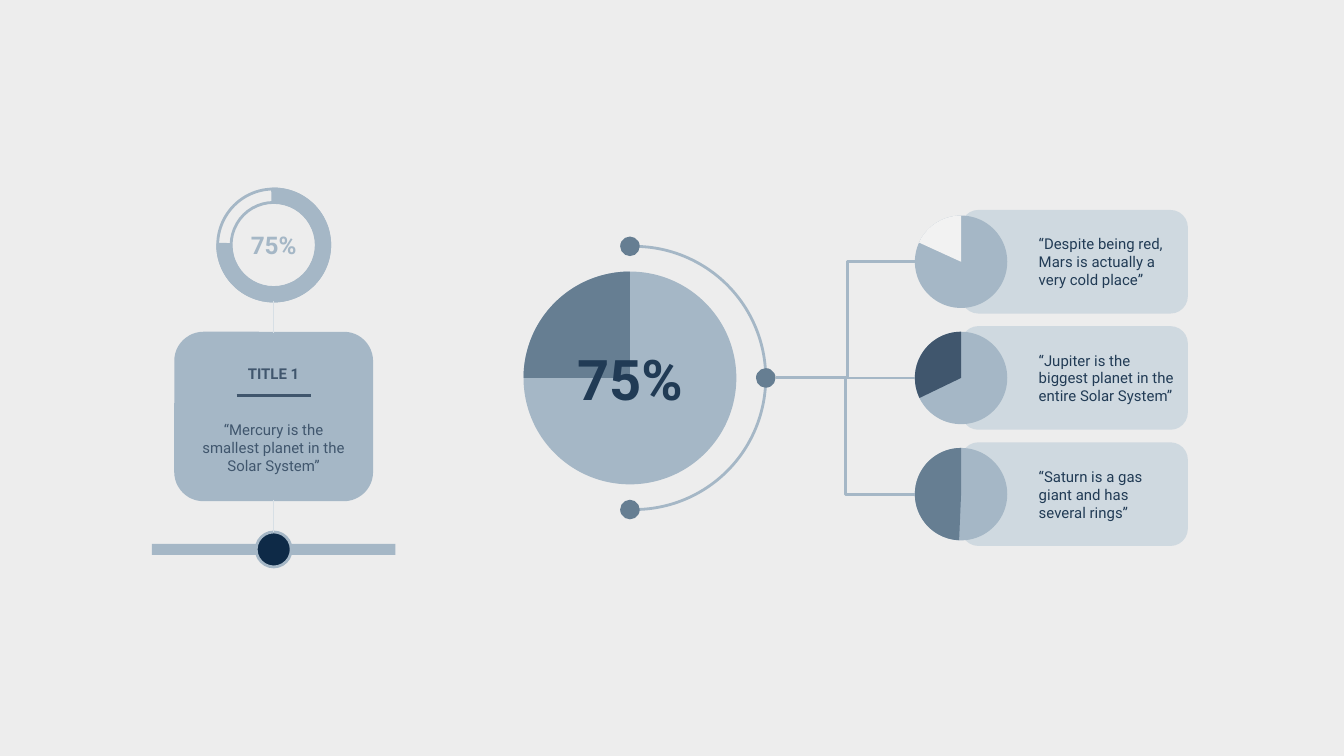
from typing import NamedTuple, Optional

from lxml import etree
from pptx import Presentation
from pptx.dml.color import RGBColor
from pptx.enum.shapes import MSO_CONNECTOR, MSO_SHAPE
from pptx.enum.text import MSO_ANCHOR, PP_ALIGN
from pptx.oxml.ns import qn
from pptx.util import Emu, Inches, Pt

ARC, BLOCK, DONUT = MSO_SHAPE.ARC, MSO_SHAPE.BLOCK_ARC, MSO_SHAPE.DONUT
OVAL, PIE = MSO_SHAPE.OVAL, MSO_SHAPE.PIE
RECT, ROUND = MSO_SHAPE.RECTANGLE, MSO_SHAPE.ROUNDED_RECTANGLE
ELBOW, LINE = MSO_CONNECTOR.ELBOW, MSO_CONNECTOR.STRAIGHT
LEFT, CENTER, MIDDLE = PP_ALIGN.LEFT, PP_ALIGN.CENTER, MSO_ANCHOR.MIDDLE

SCALE = 914400 / 192  # EMU in one px
WIDE, HIGH = 1920, 1080
FONT = "Roboto"
BACK, MIST, SKY, STEEL = "EDEDED", "CFD9E0", "A5B7C6", "667E92"
SLATE, NAVY, INK, HAIR, PALE = "40566D", "213B55", "0E2A47", "D7DFE5", "F2F2F2"
CORNER = 0.167
TOP = 270  # degrees at twelve o'clock


class Box(NamedTuple):
    """An area given by its centre and size, in px."""
    x: int
    y: int
    w: int
    h: int


class Fact(NamedTuple):
    text: str
    start: float  # degrees where the slice begins
    color: str
    bend: Optional[float]  # where its elbow turns


FACTS = [
    Fact("“Despite being red, Mars is actually a very cold place”", 204.5, PALE, 0.515),
    Fact("“Jupiter is the biggest planet in the entire Solar System”", 154.2, SLATE, None),
    Fact("“Saturn is a gas giant and has several rings”", 92.4, STEEL, None),
]
MID = 540  # centre line of the middle diagram
STEP = 166  # distance between facts
HUB = 900  # centre of the large pie
REACH = 188  # radius of the arc
NODE = 1094  # dot on the right of the arc
DOT = 28
SPOT = 1373  # centre of the small pies
SMALL = 132
AXIS = 391  # centre of the left column


def px(n: float) -> Emu:
    return Emu(round(n * SCALE))


def rgb(code: str) -> RGBColor:
    return RGBColor.from_string(code)


def turn(deg: float) -> float:
    """Angle as an adjustment value."""
    return deg * 0.6


def place(box: Box) -> list[Emu]:
    return [px(n) for n in (box.x - box.w / 2, box.y - box.h / 2, box.w, box.h)]


def disc(x: int, y: int, size: int) -> Box:
    return Box(x, y, size, size)


def draw(slide, kind, box: Box, fill: Optional[str] = None,
         line: Optional[str] = None, adj: tuple[float, ...] = ()) -> None:
    shape = slide.shapes.add_shape(kind, *place(box))
    shape.shadow.inherit = False
    for i, value in enumerate(adj):
        shape.adjustments[i] = value
    if fill:
        shape.fill.solid()
        shape.fill.fore_color.rgb = rgb(fill)
    else:
        shape.fill.background()
    if line:
        shape.line.color.rgb = rgb(line)
        shape.line.width = Pt(1.5)
    else:
        shape.line.fill.background()


def pie(slide, box: Box, start: float, color: str) -> None:
    draw(slide, OVAL, box, SKY)
    draw(slide, PIE, box, color, adj=(turn(start), turn(TOP)))


def link(slide, kind, start: tuple[int, int], end: tuple[int, int], color: str,
         width: float = 1.5, bend: Optional[float] = None) -> None:
    wire = slide.shapes.add_connector(kind, *map(px, start + end))
    wire.line.color.rgb = rgb(color)
    wire.line.width = Pt(width)
    props = wire.line._ln.getparent()
    etree.SubElement(props, qn("a:effectLst"))
    if bend:
        guides = props.find(qn("a:prstGeom")).find(qn("a:avLst"))
        etree.SubElement(guides, qn("a:gd"), name="adj1",
                         fmla=f"val {round(bend * 100000)}")


def label(slide, box: Box, text: str, color: str, size: int = 8,
          bold: bool = False, align=CENTER) -> None:
    frame = slide.shapes.add_textbox(*place(box)).text_frame
    frame.word_wrap = True
    frame.vertical_anchor = MIDDLE
    frame.margin_left = frame.margin_right = Inches(0.1)
    frame.margin_top = frame.margin_bottom = Inches(0.1)
    frame.text = text
    para = frame.paragraphs[0]
    para.alignment = align
    font = para.runs[0].font
    font.name, font.size, font.bold = FONT, Pt(size), bold
    font.color.rgb = rgb(color)


def diagram(slide) -> None:
    rows = [(MID + (i - 1) * STEP, fact) for i, fact in enumerate(FACTS)]

    # Fact cards
    for y, fact in rows:
        draw(slide, ROUND, Box(1535, y, 324, 148), MIST, adj=(CORNER,))
        label(slide, Box(1584, y, 238, 92), fact.text, NAVY, align=LEFT)

    # Arc and pies
    draw(slide, ARC, disc(NODE - REACH, MID, 2 * REACH), line=SKY,
         adj=(turn(TOP), turn(88.3)))
    pie(slide, disc(HUB, MID, 304), 180, STEEL)
    for y, fact in rows:
        pie(slide, disc(SPOT, y, SMALL), fact.start, fact.color)

    # Dots on the arc
    for x, y in ((HUB, MID - REACH), (HUB, MID + REACH), (NODE, MID)):
        draw(slide, OVAL, disc(x, y, DOT), STEEL)

    # Branches to the facts
    for y, fact in rows:
        link(slide, ELBOW, (NODE + DOT // 2, MID), (SPOT - SMALL // 2, y),
             SKY, bend=fact.bend)

    label(slide, Box(HUB, MID, 210, 132), "75%", NAVY, 30, True)


def column(slide) -> None:
    # Time bar, card and marker
    draw(slide, RECT, Box(AXIS, 785, 348, 16), SKY)
    draw(slide, ROUND, Box(AXIS, 595, 280, 238), SKY, SKY, (CORNER,))
    draw(slide, OVAL, disc(AXIS, 785, 50), INK, SKY)

    # Card text
    label(slide, Box(AXIS, 639, 244, 96), "“Mercury is the smallest planet in the Solar System”", SLATE)
    label(slide, Box(AXIS, 534, 176, 46), "TITLE 1", SLATE, bold=True)
    link(slide, LINE, (AXIS - 53, 565), (AXIS + 53, 565), SLATE)

    # Progress ring
    ring = disc(AXIS, 350, 160)
    draw(slide, DONUT, ring, line=SKY, adj=(0.12,))
    draw(slide, BLOCK, ring, SKY, SKY, (turn(268.9), turn(180.7), 0.116))
    label(slide, Box(AXIS, 350, 122, 76), "75%", SKY, 13, True)

    # Thin links between the parts
    for top, end in ((430, 476), (714, 760)):
        link(slide, LINE, (AXIS, top), (AXIS, end), HAIR, 0.75)


def main() -> None:
    deck = Presentation()
    deck.slide_width, deck.slide_height = px(WIDE), px(HIGH)
    slide = deck.slides.add_slide(deck.slide_layouts[6])
    slide.background.fill.solid()
    slide.background.fill.fore_color.rgb = rgb(BACK)
    diagram(slide)
    column(slide)
    deck.save("out.pptx")


if __name__ == "__main__":
    main()
